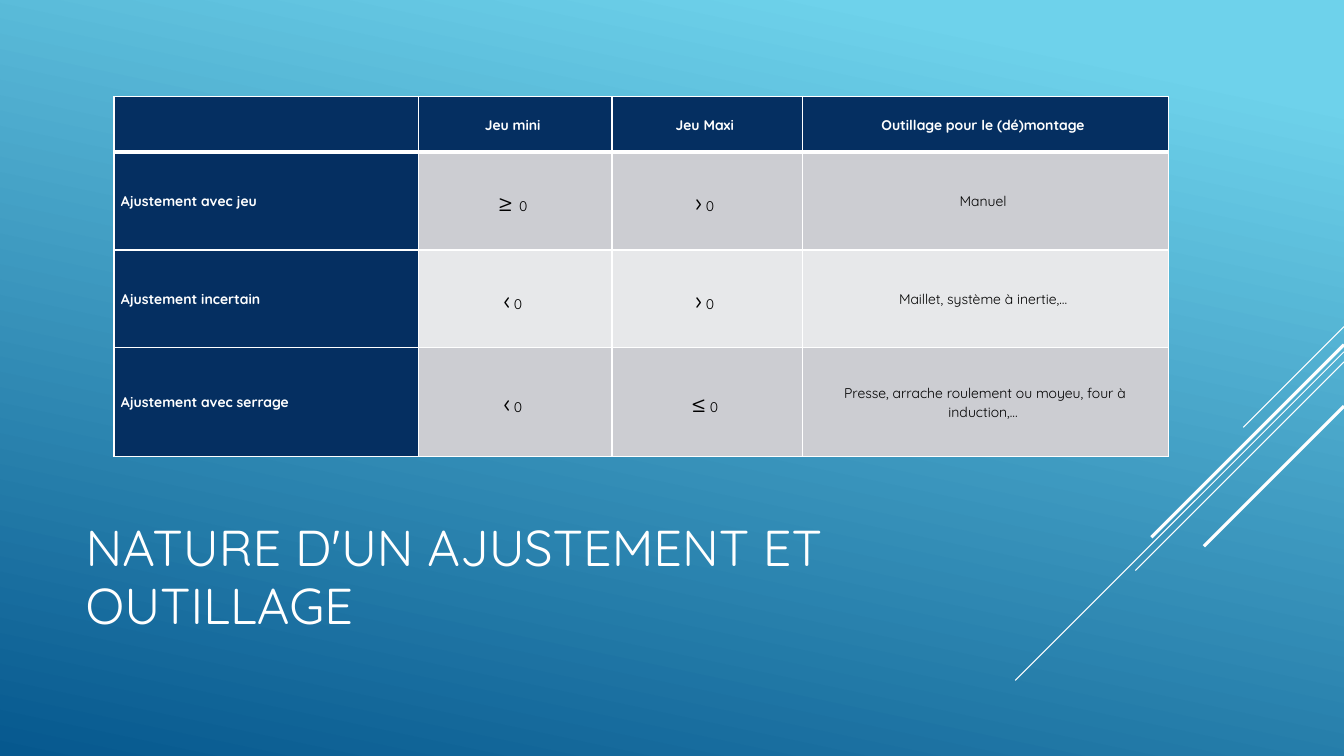
import dataclasses

import lxml.etree
import pptx
import pptx.dml.color
import pptx.enum.shapes
import pptx.enum.text
import pptx.oxml.ns
import pptx.util

Inches = pptx.util.Inches
Pt = pptx.util.Pt


@dataclasses.dataclass(frozen=True)
class Theme:
    """Colours, font and type sizes of the slide."""
    font: str = "Quicksand"
    white: str = "FFFFFF"
    black: str = "000000"
    navy: str = "052F61"
    bands: tuple = ("CCCDD2", "E7E8EA")
    sky: tuple = ((0.1, "6ED2EB"), (1.0, "06588E"))
    title_size: int = 36
    sign_size: int = 18
    gap_size: int = 16
    text_size: int = 10
    thin: float = 0.75
    border: int = 1
    thick: float = 2.25
    header_rule: int = 3


THEME = Theme()
WIDTH, HEIGHT = 13.33, 7.5
TITLE = "NATURE D'UN AJUSTEMENT ET OUTILLAGE"
TITLE_BOX = (0.75, 4.91, 9.33, 1.65)
FIT_BOX = (1.13, 0.96, 10.46, 3.57)
COLUMN_WIDTHS = (3.02, 1.92, 1.89, 3.63)
ROW_HEIGHTS = (0.55, 0.97, 0.97, 1.08)

AT_LEAST = (("≥", THEME.sign_size), (" ", THEME.gap_size), ("0 ", THEME.text_size))
AT_MOST, ABOVE, BELOW = (
    ((sign, THEME.sign_size), (" 0 ", THEME.text_size)) for sign in "≤›‹"
)
FITS = (
    ("", "Jeu mini ", "Jeu Maxi ", "Outillage pour le (dé)montage "),
    ("Ajustement avec jeu", AT_LEAST, ABOVE, "Manuel "),
    ("Ajustement incertain", BELOW, ABOVE, "Maillet, système à inertie,… "),
    ("Ajustement avec serrage", BELOW, AT_MOST,
     "Presse, arrache roulement ou moyeu, four à induction,… "),
)
DIAGONALS = (
    (3.24, 1.0, THEME.thin),
    (3.49, 3.26, THEME.thin),
    (3.59, 2.07, THEME.thin),
    (3.42, 1.91, THEME.thick),
    (4.03, 1.39, THEME.thick),
)


def rgb(code):
    """Return the colour for a hexadecimal code."""
    return pptx.dml.color.RGBColor.from_string(code)


def apply(target, formats):
    """Set every attribute named in formats on the target."""
    for attribute, value in formats.items():
        setattr(target, attribute, value)


def write_run(paragraph, text, size, colour, bold=False):
    """Add one formatted run to a paragraph."""
    run = paragraph.add_run()
    run.text = text
    apply(run.font, {"name": THEME.font, "size": Pt(size), "bold": bold})
    run.font.color.rgb = rgb(colour)


def paint_background(slide):
    """Fill the slide with the slanted blue gradient."""
    sky = slide.background.fill
    sky.gradient()
    sky.gradient_angle = 258
    for stop, (position, colour) in zip(sky.gradient_stops, THEME.sky):
        stop.position = position
        stop.color.rgb = rgb(colour)


def draw_diagonals(slide, right):
    """Draw the 45 degree lines that descend leftwards from the right edge."""
    for top, reach, weight in DIAGONALS:
        diagonal = slide.shapes.add_connector(
            pptx.enum.shapes.MSO_CONNECTOR.STRAIGHT,
            Inches(right), Inches(top), Inches(right - reach), Inches(top + reach))
        diagonal.line.color.rgb = rgb(THEME.white)
        diagonal.line.width = Pt(weight)
        lxml.etree.SubElement(diagonal._element.spPr, pptx.oxml.ns.qn("a:effectLst"))


def place_title(slide, box):
    """Move the title placeholder into its box and write the title."""
    title = slide.shapes.title
    apply(title, dict(zip(("left", "top", "width", "height"), map(Inches, box))))
    apply(title.text_frame, {
        "word_wrap": True,
        "auto_size": pptx.enum.text.MSO_AUTO_SIZE.NONE,
        "vertical_anchor": pptx.enum.text.MSO_ANCHOR.MIDDLE,
    })
    heading = title.text_frame.paragraphs[0]
    apply(heading, {"alignment": pptx.enum.text.PP_ALIGN.LEFT, "line_spacing": 0.97})
    write_run(heading, TITLE, THEME.title_size, THEME.white)


def draw_borders(cell, row):
    """Outline a cell in white, with a heavier rule under the header row."""
    weights = {
        "L": THEME.border,
        "R": THEME.border,
        "T": THEME.header_rule if row == 1 else THEME.border,
        "B": THEME.header_rule if row == 0 else THEME.border,
    }
    properties = cell._tc.get_or_add_tcPr()
    for index, (side, weight) in enumerate(weights.items()):
        edge = lxml.etree.Element(pptx.oxml.ns.qn(f"a:ln{side}"), w=str(Pt(weight)))
        paint = lxml.etree.SubElement(edge, pptx.oxml.ns.qn("a:solidFill"))
        lxml.etree.SubElement(paint, pptx.oxml.ns.qn("a:srgbClr"), val=THEME.white)
        properties.insert(index, edge)


def fill_cell(cell, content, row, column):
    """Format one cell according to its place and write its content."""
    heading = row == 0 or column == 0
    apply(cell, {
        "margin_left": Inches(0.07),
        "margin_right": Inches(0.08),
        "margin_top": 0,
        "margin_bottom": 0,
        "vertical_anchor": pptx.enum.text.MSO_ANCHOR.MIDDLE,
    })
    cell.fill.solid()
    cell.fill.fore_color.rgb = rgb(THEME.navy if heading else THEME.bands[(row - 1) % 2])
    draw_borders(cell, row)
    align = pptx.enum.text.PP_ALIGN
    entry = cell.text_frame.paragraphs[0]
    apply(entry, {"alignment": align.CENTER if column else align.LEFT,
                  "line_spacing": 1.07})
    pieces = ((content, THEME.text_size),) if isinstance(content, str) else content
    for text, size in pieces:
        if text:
            write_run(entry, text, size, THEME.white if heading else THEME.black, heading)


def place_fit_table(slide, box):
    """Build the table of fits, clearances and tools in its box."""
    fits = slide.shapes.add_table(len(FITS), len(COLUMN_WIDTHS), *map(Inches, box)).table
    for column, width in zip(fits.columns, COLUMN_WIDTHS):
        column.width = Inches(width)
    for row, height in zip(fits.rows, ROW_HEIGHTS):
        row.height = Inches(height)
    for row, contents in enumerate(FITS):
        for column, content in enumerate(contents):
            fill_cell(fits.cell(row, column), content, row, column)


def main():
    """Build and save the presentation."""
    deck = pptx.Presentation()
    apply(deck, {"slide_width": Inches(WIDTH), "slide_height": Inches(HEIGHT)})
    slide = deck.slides.add_slide(deck.slide_layouts.get_by_name("Title Only"))
    paint_background(slide)
    draw_diagonals(slide, WIDTH)
    place_title(slide, TITLE_BOX)
    place_fit_table(slide, FIT_BOX)
    deck.save("out.pptx")


if __name__ == "__main__":
    main()
